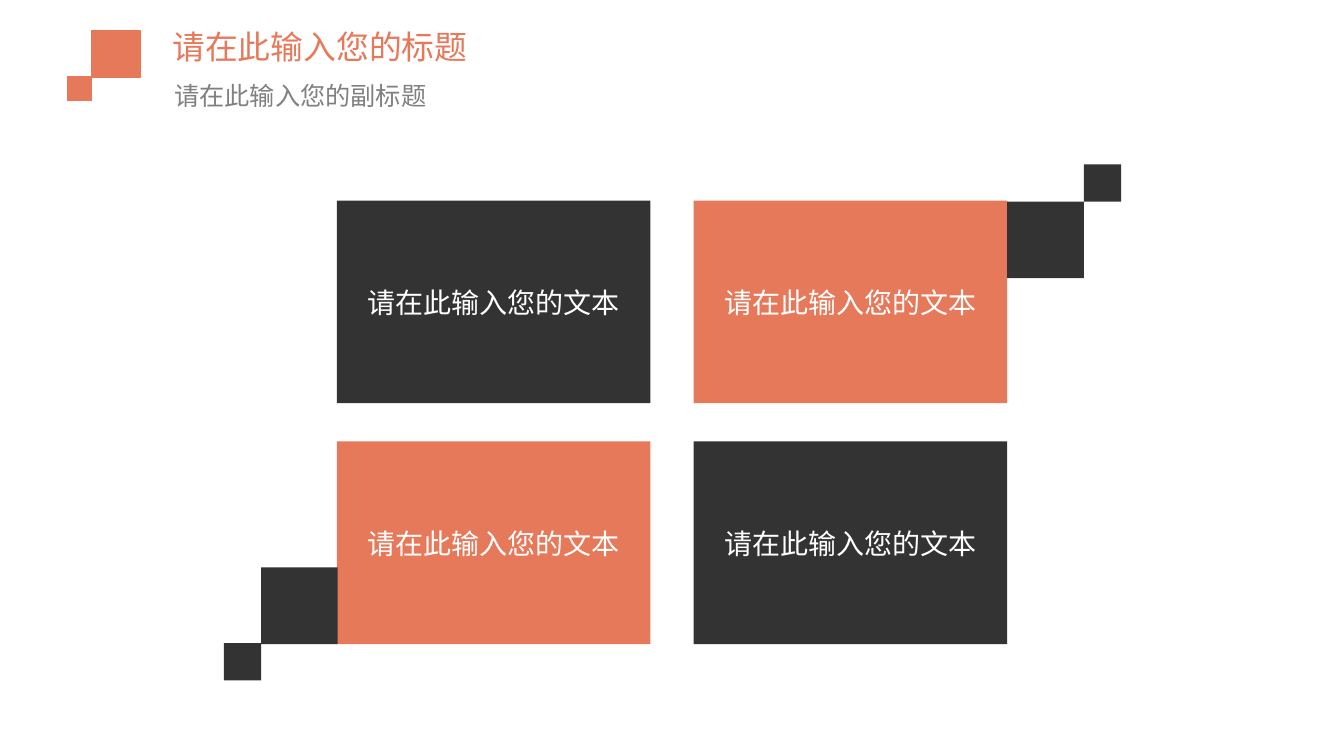
from dataclasses import dataclass

from pptx import Presentation
from pptx.dml.color import RGBColor
from pptx.enum.shapes import MSO_SHAPE
from pptx.enum.text import MSO_ANCHOR, MSO_AUTO_SIZE, PP_ALIGN
from pptx.shapes.autoshape import Shape
from pptx.slide import Slide
from pptx.util import Inches, Pt


@dataclass(frozen=True)
class Theme:
    font: str = "Arial"
    coral: RGBColor = RGBColor(0xE6, 0x79, 0x5A)
    dark: RGBColor = RGBColor(0x33, 0x33, 0x33)
    gray: RGBColor = RGBColor(0x80, 0x80, 0x80)
    white: RGBColor = RGBColor(0xFF, 0xFF, 0xFF)
    title_size: float = 23.4
    subtitle_size: float = 18
    card_size: float = 20


@dataclass(frozen=True)
class Block:
    left: float
    top: float
    width: float
    height: float
    color: RGBColor
    text: str = ""
    outlined: bool = False


THEME = Theme()

# Cards: a two-by-two checkerboard
CARD_WIDTH, CARD_HEIGHT = 3.11, 2.01
CARD_LEFTS = (3.34, 6.88)
CARD_TOPS = (1.99, 4.38)
CARDS = [
    Block(left, top, CARD_WIDTH, CARD_HEIGHT,
          THEME.dark if row == column else THEME.coral, "请在此输入您的文本")
    for row, top in enumerate(CARD_TOPS)
    for column, left in enumerate(CARD_LEFTS)
]

# Squares stepping away from the title and from two card corners
TITLE_SQUARES = [
    Block(0.91, 0.3, 0.48, 0.47, THEME.coral, outlined=True),
    Block(0.67, 0.76, 0.24, 0.24, THEME.coral, outlined=True),
]
CORNER_SQUARES = [
    Block(left, top, side, side, THEME.dark)
    for left, top, side in (
        (9.99, 2.0, 0.76), (10.75, 1.63, 0.37),
        (2.59, 5.63, 0.76), (2.22, 6.38, 0.37),
    )
]


def write_text(box: Shape, text: str, size: float, color: RGBColor,
               align: PP_ALIGN, anchor: MSO_ANCHOR) -> None:
    frame = box.text_frame
    frame.text = text
    frame.word_wrap = True
    frame.auto_size = MSO_AUTO_SIZE.NONE
    frame.vertical_anchor = anchor
    para = frame.paragraphs[0]
    para.alignment = align
    para.font.name = THEME.font
    para.font.size = Pt(size)
    para.font.color.rgb = color


def draw_block(page: Slide, block: Block) -> None:
    box = page.shapes.add_shape(
        MSO_SHAPE.RECTANGLE, Inches(block.left), Inches(block.top),
        Inches(block.width), Inches(block.height))
    box.shadow.inherit = False
    box.fill.solid()
    box.fill.fore_color.rgb = block.color
    if block.outlined:
        box.line.color.rgb = block.color
        box.line.width = Pt(0.75)
    else:
        box.line.fill.background()
    if block.text:
        write_text(box, block.text, THEME.card_size, THEME.white,
                   PP_ALIGN.CENTER, MSO_ANCHOR.MIDDLE)


def draw_headings(page: Slide) -> None:
    title = page.shapes.title
    title.left, title.top = Inches(1.61), Inches(0.14)
    title.width, title.height = Inches(9.56), Inches(0.64)
    write_text(title, "请在此输入您的标题", THEME.title_size, THEME.coral,
               PP_ALIGN.LEFT, MSO_ANCHOR.MIDDLE)

    subtitle = page.shapes.add_textbox(
        Inches(1.63), Inches(0.78), Inches(9.54), Inches(0.54))
    write_text(subtitle, "请在此输入您的副标题", THEME.subtitle_size, THEME.gray,
               PP_ALIGN.LEFT, MSO_ANCHOR.TOP)
    subtitle.text_frame.paragraphs[0].line_spacing = 0.9


def main() -> None:
    deck = Presentation()
    deck.slide_width, deck.slide_height = Inches(13.33), Inches(7.5)
    page = deck.slides.add_slide(deck.slide_layouts[5])
    for block in TITLE_SQUARES + CARDS + CORNER_SQUARES:
        draw_block(page, block)
    draw_headings(page)
    deck.save("out.pptx")


if __name__ == "__main__":
    main()
